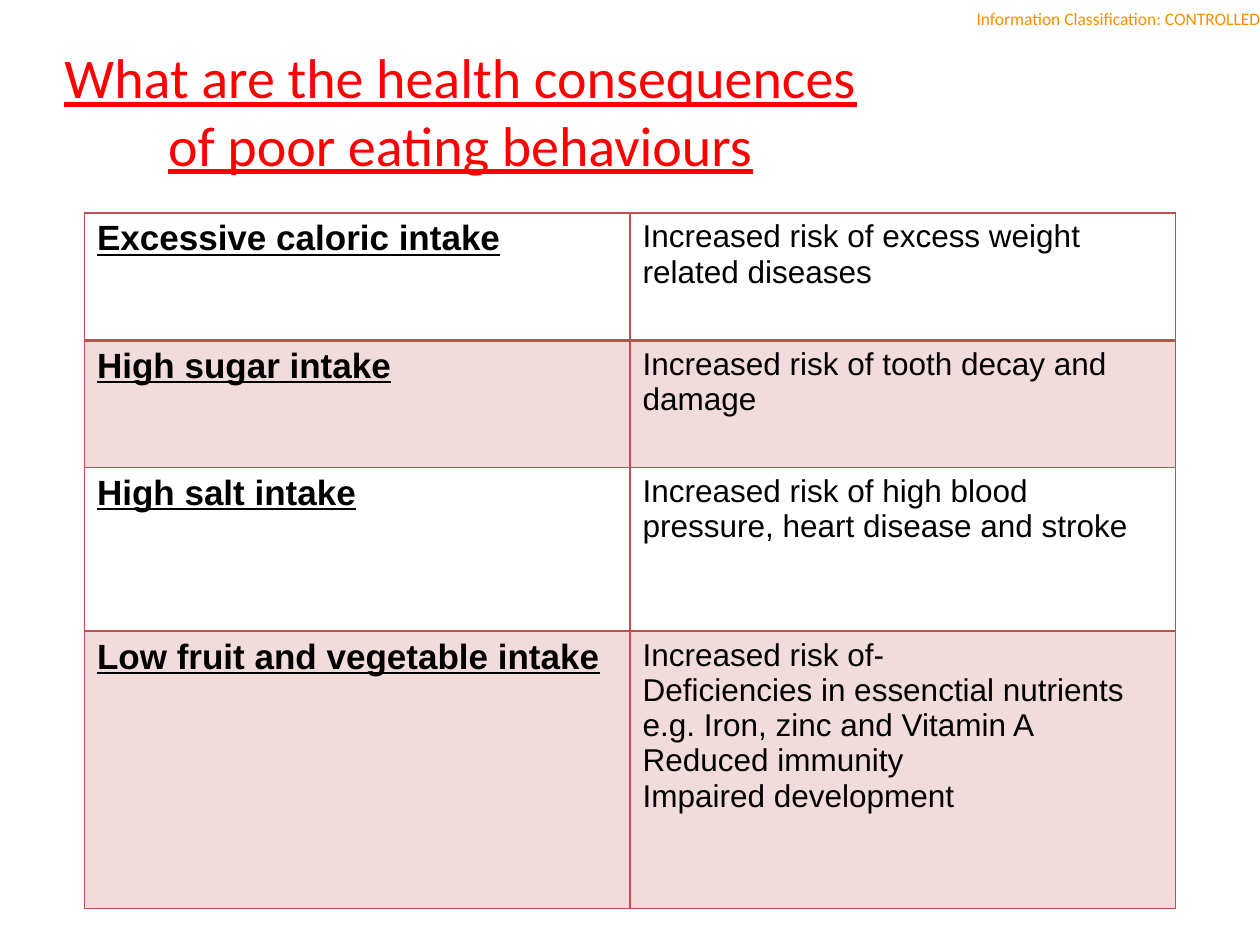
from dataclasses import dataclass

from lxml import etree
from pptx import Presentation
from pptx.dml.color import RGBColor
from pptx.enum import text
from pptx.oxml import ns
from pptx.util import Inches, Pt


@dataclass(frozen=True)
class Theme:
    title: RGBColor = RGBColor(0xFF, 0x00, 0x00)
    label: RGBColor = RGBColor(0xFF, 0x8C, 0x00)
    ink: RGBColor = RGBColor(0x00, 0x00, 0x00)
    border: RGBColor = RGBColor(0xC0, 0x50, 0x4D)
    band: RGBColor = RGBColor(0xF2, 0xDC, 0xDB)
    heading_font: str = "Calibri"
    table_font: str = "Arial"
    title_size: int = 32
    label_size: int = 10
    cause_size: int = 20
    effect_size: int = 18


@dataclass(frozen=True)
class Risk:
    cause: str
    effects: tuple[str, ...]
    height: float


THEME = Theme()
RISKS = (
    Risk("Excessive caloric intake",
         ("Increased risk of excess weight related diseases",), 1.01),
    Risk("High sugar intake",
         ("Increased risk of tooth decay and damage",), 1.01),
    Risk("High salt intake",
         ("Increased risk of high blood pressure, heart disease and stroke",), 1.3),
    Risk("Low fruit and vegetable intake",
         ("Increased risk of-",
          "Deficiencies in essenctial nutrients e.g. Iron, zinc and Vitamin A",
          "Reduced immunity",
          "Impaired development"), 2.2),
)


def style(p, font: str, size: int, color: RGBColor, strong: bool = False) -> None:
    p.font.name = font
    p.font.size = Pt(size)
    p.font.color.rgb = color
    p.font.bold = strong
    p.font.underline = strong


def place(sp, left: float, top: float, width: float, height: float) -> None:
    sp.left, sp.top = Inches(left), Inches(top)
    sp.width, sp.height = Inches(width), Inches(height)


def add_title(slide) -> None:
    sp = slide.shapes.title
    place(sp, 0.35, 0.29, 6.61, 1.1)
    tf = sp.text_frame
    tf.text = "What are the health consequences of poor eating behaviours"
    tf.word_wrap = True
    tf.auto_size = text.MSO_AUTO_SIZE.NONE
    tf.vertical_anchor = text.MSO_ANCHOR.TOP
    p = tf.paragraphs[0]
    p.alignment = text.PP_ALIGN.CENTER
    style(p, THEME.heading_font, THEME.title_size, THEME.title)
    p.font.underline = True


def add_classification(slide) -> None:
    sp = slide.shapes.add_textbox(Inches(7.37), 0, Inches(2.63), Inches(0.29))
    tf = sp.text_frame
    tf.text = "Information Classification: CONTROLLED"
    tf.word_wrap = True
    tf.vertical_anchor = text.MSO_ANCHOR.MIDDLE
    tf.margin_left = tf.margin_right = tf.margin_top = tf.margin_bottom = 0
    p = tf.paragraphs[0]
    p.alignment = text.PP_ALIGN.RIGHT
    style(p, THEME.heading_font, THEME.label_size, THEME.label)


def set_borders(cell, top: float, bottom: float) -> None:
    tc_pr = cell._tc.get_or_add_tcPr()
    for side, width in (("L", 1), ("R", 1), ("T", top), ("B", bottom)):
        ln = etree.SubElement(tc_pr, ns.qn(f"a:ln{side}"), w=str(Pt(width)))
        fill = etree.SubElement(ln, ns.qn("a:solidFill"))
        etree.SubElement(fill, ns.qn("a:srgbClr"), val=str(THEME.border))


def fill_cell(cell, lines: tuple[str, ...], size: int, strong: bool) -> None:
    cell.text = "\n".join(lines)
    for p in cell.text_frame.paragraphs:
        style(p, THEME.table_font, size, THEME.ink, strong)


def add_risk_table(slide, risks: tuple[Risk, ...]) -> None:
    height = sum(risk.height for risk in risks)
    table = slide.shapes.add_table(len(risks), 2, Inches(0.67), Inches(1.69),
                                   Inches(8.66), Inches(height)).table
    table.first_row = False
    table.horz_banding = False
    for i, risk in enumerate(risks):
        row = table.rows[i]
        row.height = Inches(risk.height)
        cause, effect = row.cells
        fill_cell(cause, (risk.cause,), THEME.cause_size, True)
        fill_cell(effect, risk.effects, THEME.effect_size, False)
        for cell in (cause, effect):
            set_borders(cell, 2 if i == 1 else 1, 2 if i == 0 else 1)
            if i % 2:
                cell.fill.solid()
                cell.fill.fore_color.rgb = THEME.band
            else:
                cell.fill.background()


def main() -> None:
    prs = Presentation()
    prs.slide_width, prs.slide_height = Inches(10), Inches(7.5)
    slide = prs.slides.add_slide(prs.slide_layouts[5])
    add_classification(slide)
    add_title(slide)
    add_risk_table(slide, RISKS)
    prs.save("out.pptx")


if __name__ == "__main__":
    main()
